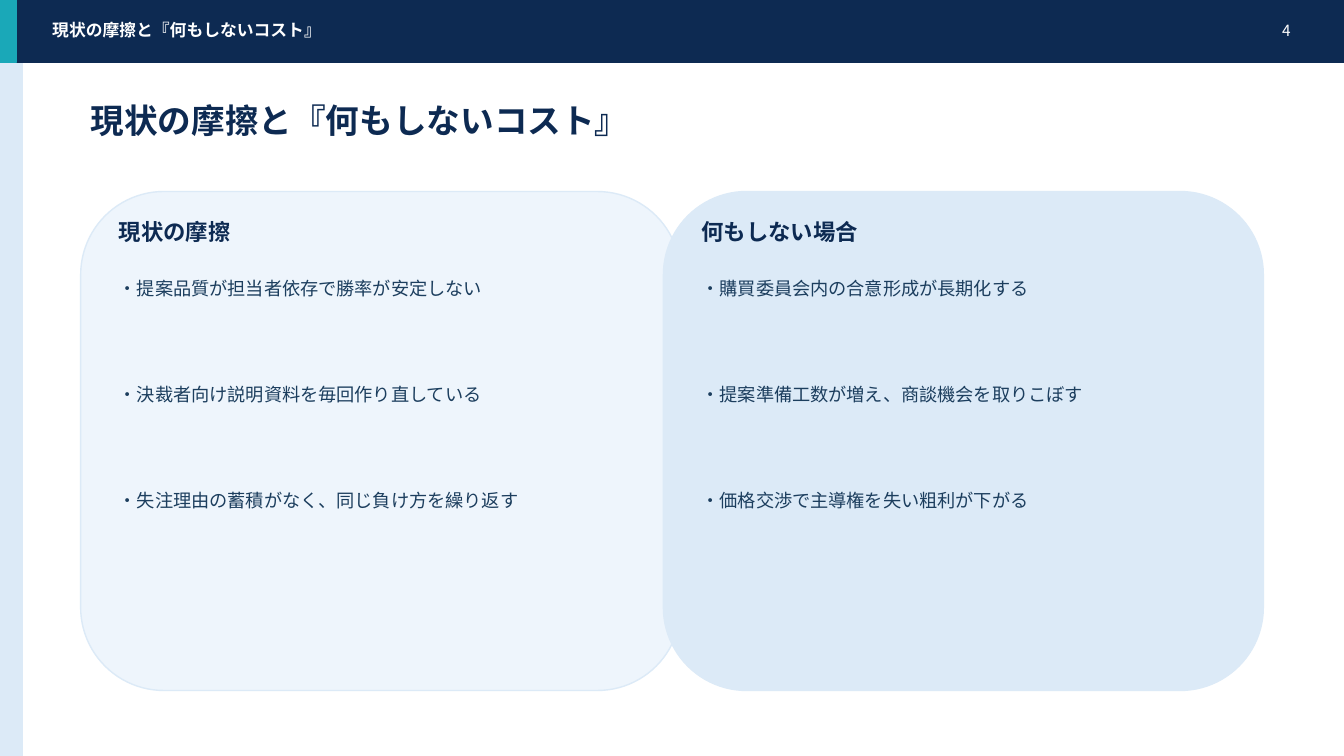
from dataclasses import dataclass

from lxml.etree import SubElement
from pptx import Presentation
from pptx.dml.color import RGBColor
from pptx.enum.shapes import MSO_SHAPE
from pptx.enum.text import MSO_ANCHOR, MSO_AUTO_SIZE, PP_ALIGN
from pptx.oxml.ns import qn
from pptx.util import Inches, Pt


@dataclass(frozen=True)
class Theme:
    font: str = "Noto Sans CJK JP"
    navy: str = "0D2A52"
    teal: str = "1AA8B8"
    mist: str = "DCEAF7"
    pale: str = "EEF5FC"
    body: str = "1C3E5E"
    white: str = "FFFFFF"
    title_size: int = 24
    heading_size: int = 16
    body_size: int = 13
    header_size: int = 12
    number_size: int = 11


THEME = Theme()
TITLE = "現状の摩擦と『何もしないコスト』"
CARD_TOP, CARD_WIDTH, CARD_HEIGHT = 1.9, 5.95, 4.95
TEXT_INSET = 0.28
POINT_TOP, POINT_STEP = 2.7, 1.05

# Left edge, fill, heading and points of each card
CARDS = [
    (0.8, THEME.pale, "現状の摩擦", [
        "・提案品質が担当者依存で勝率が安定しない",
        "・決裁者向け説明資料を毎回作り直している",
        "・失注理由の蓄積がなく、同じ負け方を繰り返す",
    ]),
    (6.58, THEME.mist, "何もしない場合", [
        "・購買委員会内の合意形成が長期化する",
        "・提案準備工数が増え、商談機会を取りこぼす",
        "・価格交渉で主導権を失い粗利が下がる",
    ]),
]


def add_panel(page, kind, left, top, width, height, fill, line):
    panel = page.shapes.add_shape(
        kind, Inches(left), Inches(top), Inches(width), Inches(height))
    panel.shadow.inherit = False
    panel.fill.solid()
    panel.fill.fore_color.rgb = RGBColor.from_string(fill)
    panel.line.color.rgb = RGBColor.from_string(line)
    panel.line.width = Pt(1)


def write_text(box, text, size, color, bold=False, align=PP_ALIGN.LEFT,
               anchor=MSO_ANCHOR.MIDDLE):
    frame = box.text_frame
    frame.word_wrap = True
    frame.auto_size = MSO_AUTO_SIZE.NONE
    frame.vertical_anchor = anchor
    para = frame.paragraphs[0]
    para.alignment = align
    span = para.add_run()
    span.text = text
    span.font.size = Pt(size)
    span.font.bold = bold
    span.font.color.rgb = RGBColor.from_string(color)
    span.font.name = THEME.font
    # Japanese glyphs take the East Asian typeface
    SubElement(span.font._element, qn("a:ea"), typeface=THEME.font)


def add_text(page, left, top, width, height, text, size, color, **style):
    box = page.shapes.add_textbox(
        Inches(left), Inches(top), Inches(width), Inches(height))
    write_text(box, text, size, color, **style)


def add_title(page):
    title = page.shapes.title
    title.left, title.top = Inches(0.8), Inches(0.95)
    title.width, title.height = Inches(11.4), Inches(0.48)
    write_text(title, TITLE, THEME.title_size, THEME.navy, bold=True)


def add_header(page):
    bars = [
        (0, 0.55, 0.22, 6.95, THEME.mist),
        (0, 0, 13.33, 0.62, THEME.navy),
        (0, 0, 0.16, 0.62, THEME.teal),
    ]
    for left, top, width, height, color in bars:
        add_panel(page, MSO_SHAPE.RECTANGLE, left, top, width, height,
                  color, color)
    add_text(page, 0.42, 0.17, 8.8, 0.26, TITLE, THEME.header_size,
             THEME.white, bold=True)
    add_text(page, 12.15, 0.17, 0.75, 0.26, "4", THEME.number_size,
             THEME.white, align=PP_ALIGN.RIGHT)


def add_card(page, left, fill, heading, points):
    add_panel(page, MSO_SHAPE.ROUNDED_RECTANGLE, left, CARD_TOP, CARD_WIDTH,
              CARD_HEIGHT, fill, THEME.mist)
    text_left = left + TEXT_INSET
    add_text(page, text_left, 2.15, 5.2, 0.3, heading, THEME.heading_size,
             THEME.navy, bold=True)
    for row, point in enumerate(points):
        add_text(page, text_left, POINT_TOP + row * POINT_STEP, 5.25, 0.82,
                 point, THEME.body_size, THEME.body, anchor=MSO_ANCHOR.TOP)


def main():
    deck = Presentation()
    deck.slide_width, deck.slide_height = Inches(13.33), Inches(7.5)
    page = deck.slides.add_slide(deck.slide_layouts.get_by_name("Title Only"))
    page.background.fill.solid()
    page.background.fill.fore_color.rgb = RGBColor.from_string(THEME.white)

    # Header band, title, then the two cards
    add_header(page)
    add_title(page)
    for card in CARDS:
        add_card(page, *card)

    deck.save("out.pptx")


if __name__ == "__main__":
    main()
